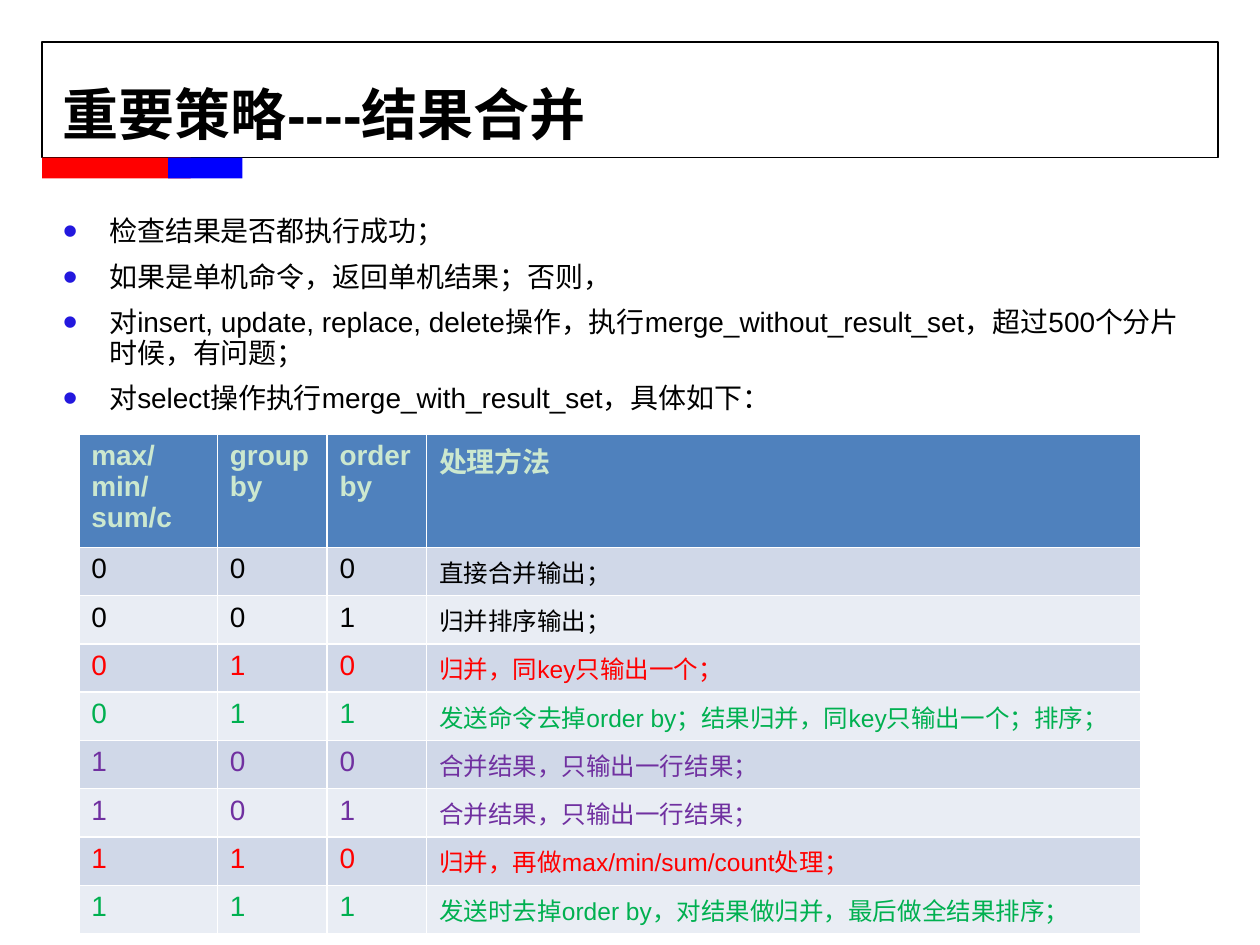
from lxml import etree
from pptx import Presentation
from pptx import util as u
from pptx.dml import color
from pptx.enum import shapes, text
from pptx.oxml import ns


def rgb(value):
    return color.RGBColor.from_string(value)


def write(paragraph, content, hex_color, font_format, paragraph_format):
    run = paragraph.add_run()
    run.text = content
    run.font.color.rgb = rgb(hex_color)
    for name, value in font_format.items():
        setattr(run.font, name, value)
    for name, value in paragraph_format.items():
        setattr(paragraph, name, value)


presentation = Presentation()
presentation.slide_width = u.Pt(720)
presentation.slide_height = u.Pt(540)
slide = presentation.slides.add_slide(presentation.slide_layouts[6])

for left, top, width, height, fill in [
    (24, 24, 672, 66, None),
    (24, 90, 85, 12, "FF0000"),
    (96, 90, 42.5, 12, "0000FF"),
]:
    shape = slide.shapes.add_shape(
        shapes.MSO_SHAPE.RECTANGLE, u.Pt(left), u.Pt(top), u.Pt(width), u.Pt(height)
    )
    shape.shadow.inherit = False
    if fill:
        shape.fill.solid()
        shape.fill.fore_color.rgb = rgb(fill)
        shape.line.fill.background()
    else:
        shape.fill.background()
        shape.line.color.rgb = rgb("000000")
        shape.line.width = u.Pt(0.75)

frame_format = {
    "word_wrap": True,
    "margin_left": 0,
    "margin_top": 0,
    "margin_right": 0,
    "margin_bottom": 0,
}
title = slide.shapes.add_textbox(u.Pt(36), u.Pt(21.5), u.Pt(648), u.Pt(90))
body = slide.shapes.add_textbox(u.Pt(36), u.Pt(124), u.Pt(648), u.Pt(356))
for box in (title, body):
    for name, value in frame_format.items():
        setattr(box.text_frame, name, value)
title.text_frame.vertical_anchor = text.MSO_ANCHOR.MIDDLE
write(
    title.text_frame.paragraphs[0],
    "重要策略----结果合并",
    "000000",
    {"name": "Arial", "size": u.Pt(32), "bold": True},
    {"line_spacing": 0.93},
)

points = [
    "检查结果是否都执行成功；",
    "如果是单机命令，返回单机结果；否则，",
    "对insert, update, replace, delete操作，执行merge_without_result_set，超过500个分片时候，有问题；",
    "对select操作执行merge_with_result_set，具体如下：",
]
for index, point in enumerate(points):
    frame = body.text_frame
    paragraph = frame.add_paragraph() if index else frame.paragraphs[0]
    properties = paragraph._p.get_or_add_pPr()
    properties.set("marL", str(u.Pt(26.5)))
    properties.set("indent", str(-u.Pt(26.5)))
    bullet_color = etree.SubElement(properties, ns.qn("a:buClr"))
    etree.SubElement(bullet_color, ns.qn("a:srgbClr"), val="2318DE")
    etree.SubElement(properties, ns.qn("a:buSzPct"), val="150000")
    etree.SubElement(properties, ns.qn("a:buFont"), typeface="Arial")
    etree.SubElement(properties, ns.qn("a:buChar"), char="•")
    write(
        paragraph,
        point,
        "000000",
        {"name": "Arial", "size": u.Pt(16)},
        {"line_spacing": 0.93, "space_before": u.Pt(8 if index else 0)},
    )

rows = [
    ("CCE8CF", "max/min/sum/c", "group by", "order by", "处理方法"),
    ("000000", "0", "0", "0", "直接合并输出；"),
    ("000000", "0", "0", "1", "归并排序输出；"),
    ("FF0000", "0", "1", "0", "归并，同key只输出一个；"),
    ("00B050", "0", "1", "1", "发送命令去掉order by；结果归并，同key只输出一个；排序；"),
    ("7030A0", "1", "0", "0", "合并结果，只输出一行结果；"),
    ("7030A0", "1", "0", "1", "合并结果，只输出一行结果；"),
    ("FF0000", "1", "1", "0", "归并，再做max/min/sum/count处理；"),
    ("00B050", "1", "1", "1", "发送时去掉order by，对结果做归并，最后做全结果排序；"),
]
widths = [79.2, 62.6, 56.9, 408.3]
table = slide.shapes.add_table(
    len(rows), len(widths), u.Pt(45), u.Pt(248), u.Pt(sum(widths)), u.Pt(281)
).table
for column, width in zip(table.columns, widths):
    column.width = u.Pt(width)
for row_index, (hex_color, *values) in enumerate(rows):
    header = row_index == 0
    table.rows[row_index].height = u.Pt(60 if header else 27.6)
    fill = "4F81BD" if header else ("E9EDF4", "D0D8E8")[row_index % 2]
    for column_index, value in enumerate(values):
        cell = table.cell(row_index, column_index)
        cell.fill.solid()
        cell.fill.fore_color.rgb = rgb(fill)
        size = 14 if column_index == 3 and not header else 16
        write(
            cell.text_frame.paragraphs[0],
            value,
            hex_color,
            {"name": "Arial", "size": u.Pt(size), "bold": header},
            {},
        )

presentation.save("out.pptx")
